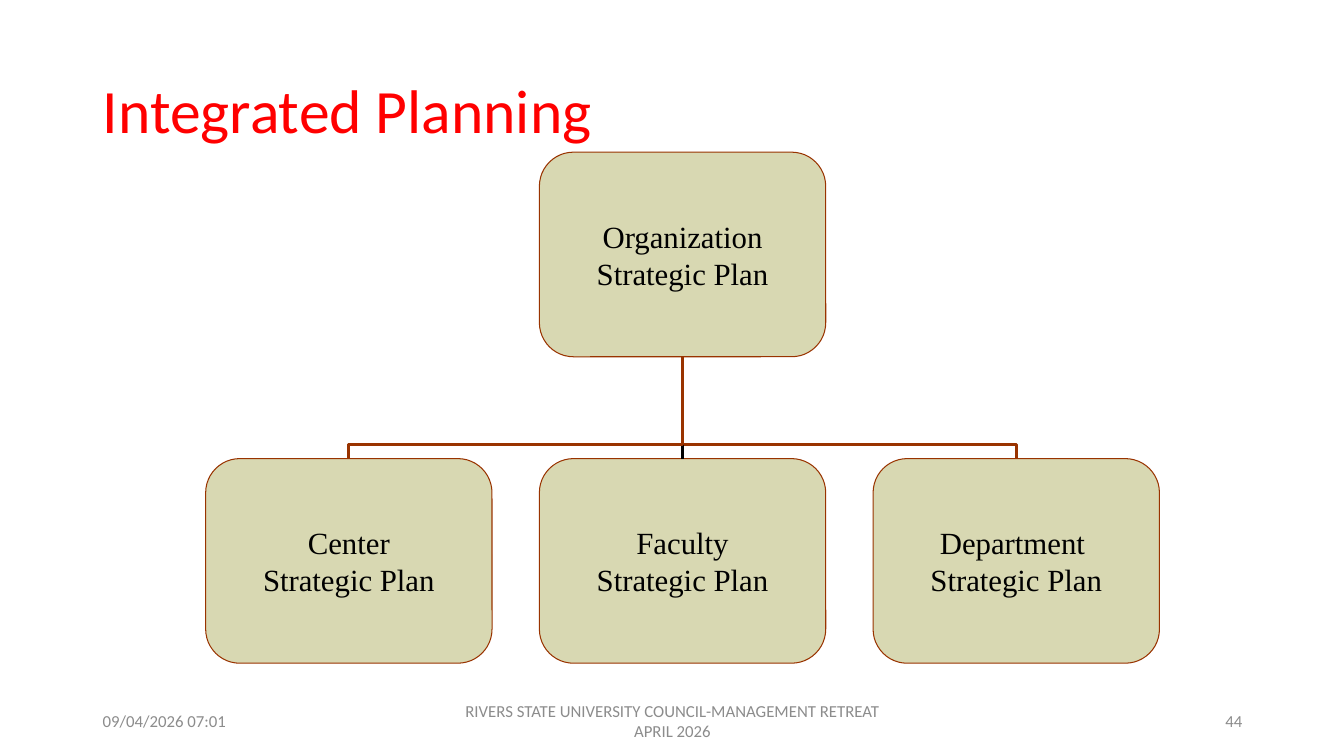
import pptx
import pptx.util
import pptx.dml.color
import pptx.enum.shapes
import pptx.enum.text
import pptx.oxml
import pptx.oxml.ns
from lxml import etree

Inches = pptx.util.Inches
RGBColor = pptx.dml.color.RGBColor
ALIGN = pptx.enum.text.PP_ALIGN
CONNECTOR = pptx.enum.shapes.MSO_CONNECTOR

RED = RGBColor(0xFF, 0x00, 0x00)
GREY = RGBColor(0x8C, 0x8C, 0x8C)
BLACK = RGBColor(0x00, 0x00, 0x00)
OLIVE = RGBColor(0x80, 0x80, 0x00)
BROWN = RGBColor(0x99, 0x33, 0x00)

PLAN_WIDTH, PLAN_HEIGHT = 2.84, 2.03
UNITS = ["Center", "Faculty", "Department "]


def write(frame, lines, size, color, font="Calibri", align=ALIGN.LEFT,
          wrap=True, spacing=None):
    frame.word_wrap = wrap
    frame.vertical_anchor = pptx.enum.text.MSO_ANCHOR.MIDDLE
    for index, line in enumerate(lines):
        paragraph = frame.paragraphs[0] if index == 0 else frame.add_paragraph()
        paragraph.alignment = align
        paragraph.line_spacing = spacing
        run = paragraph.add_run()
        run.text = line
        run.font.name = font
        run.font.size = pptx.util.Pt(size)
        run.font.color.rgb = color


def add_heading(slide, left, top, width, height):
    heading = slide.shapes.title
    heading.left, heading.top = Inches(left), Inches(top)
    heading.width, heading.height = Inches(width), Inches(height)
    write(heading.text_frame, ["Integrated Planning"], 44, RED, spacing=0.9)


def add_footer(slide, left, top, width, height):
    side, middle = 3, 4.5
    parts = [
        ("09/04/2026 07:01", left, side, ALIGN.LEFT),
        ("RIVERS STATE UNIVERSITY COUNCIL-MANAGEMENT RETREAT APRIL 2026",
         left + (width - middle) / 2, middle, ALIGN.CENTER),
        ("44", left + width - side, side, ALIGN.RIGHT),
    ]
    for text, part_left, part_width, align in parts:
        part = slide.shapes.add_textbox(Inches(part_left), Inches(top),
                                        Inches(part_width), Inches(height))
        write(part.text_frame, [text], 12, GREY, align=align)


def add_plan(slide, owner, left, top):
    plan = slide.shapes.add_shape(
        pptx.enum.shapes.MSO_SHAPE.ROUNDED_RECTANGLE, Inches(left), Inches(top),
        Inches(PLAN_WIDTH), Inches(PLAN_HEIGHT))
    plan.shadow.inherit = False
    plan.fill.solid()
    plan.fill.fore_color.rgb = OLIVE
    tint = plan.fill._xPr.find(".//" + pptx.oxml.ns.qn("a:srgbClr"))
    etree.SubElement(tint, pptx.oxml.ns.qn("a:alpha"), val="30000")
    plan.line.color.rgb = BROWN
    plan.line.width = pptx.util.Pt(0.75)
    frame = plan.text_frame
    frame.margin_left = frame.margin_top = 0
    frame.margin_right = frame.margin_bottom = 0
    write(frame, [owner, "Strategic Plan"], 22, BLACK, font="Times New Roman",
          align=ALIGN.CENTER, wrap=False)
    return plan


def add_link(slide, kind, child, parent, color):
    """Draw a connector from the top of child to the bottom of parent."""
    link = slide.shapes.add_connector(
        kind, child.left + child.width // 2, child.top,
        parent.left + parent.width // 2, parent.top + parent.height)
    link.line.color.rgb = color
    link.line.width = pptx.util.Pt(2.25)
    etree.SubElement(link._element.spPr, pptx.oxml.ns.qn("a:effectLst"))
    return link


def add_elbow(slide, child, parent):
    """Link with a bend, turned so that it leaves the child upwards."""
    elbow = add_link(slide, CONNECTOR.ELBOW, child, parent, BROWN)
    from_right = child.left > parent.left
    across, rise = elbow.width, elbow.height
    elbow.left += (across - rise) // 2
    elbow.top += (rise - across) // 2
    elbow.width, elbow.height = rise, across

    properties = elbow._element.spPr
    frame = properties.find(pptx.oxml.ns.qn("a:xfrm"))
    frame.attrib.pop("flipV", None)
    frame.set("rot", str((90 if from_right else 270) * 60000))
    guides = properties.find(".//" + pptx.oxml.ns.qn("a:avLst"))
    if guides is None:
        geometry = properties.find(pptx.oxml.ns.qn("a:prstGeom"))
        guides = etree.SubElement(geometry, pptx.oxml.ns.qn("a:avLst"))
    etree.SubElement(guides, pptx.oxml.ns.qn("a:gd"), name="adj1", fmla="val 13900")


def add_plan_tree(slide, left, top, width, height):
    step = (width - PLAN_WIDTH) / (len(UNITS) - 1)
    organization = add_plan(slide, "Organization",
                            left + (width - PLAN_WIDTH) / 2, top)
    center, faculty, department = [
        add_plan(slide, unit, left + index * step, top + height - PLAN_HEIGHT)
        for index, unit in enumerate(UNITS)]

    add_elbow(slide, department, organization)
    stem = add_link(slide, CONNECTOR.STRAIGHT, faculty, organization, BLACK)
    stem.begin_connect(faculty, 0)
    stem.end_connect(organization, 2)
    add_elbow(slide, center, organization)


def main():
    deck = pptx.Presentation()
    deck.slide_width, deck.slide_height = Inches(13.33), Inches(7.5)
    slide = deck.slides.add_slide(deck.slide_layouts.get_by_name("Title Only"))
    add_heading(slide, 0.92, 0.4, 11.5, 1.45)
    add_footer(slide, 0.92, 6.95, 11.5, 0.4)
    add_plan_tree(slide, 2.04, 1.51, 9.46, 5.07)
    deck.save("out.pptx")


if __name__ == "__main__":
    main()
